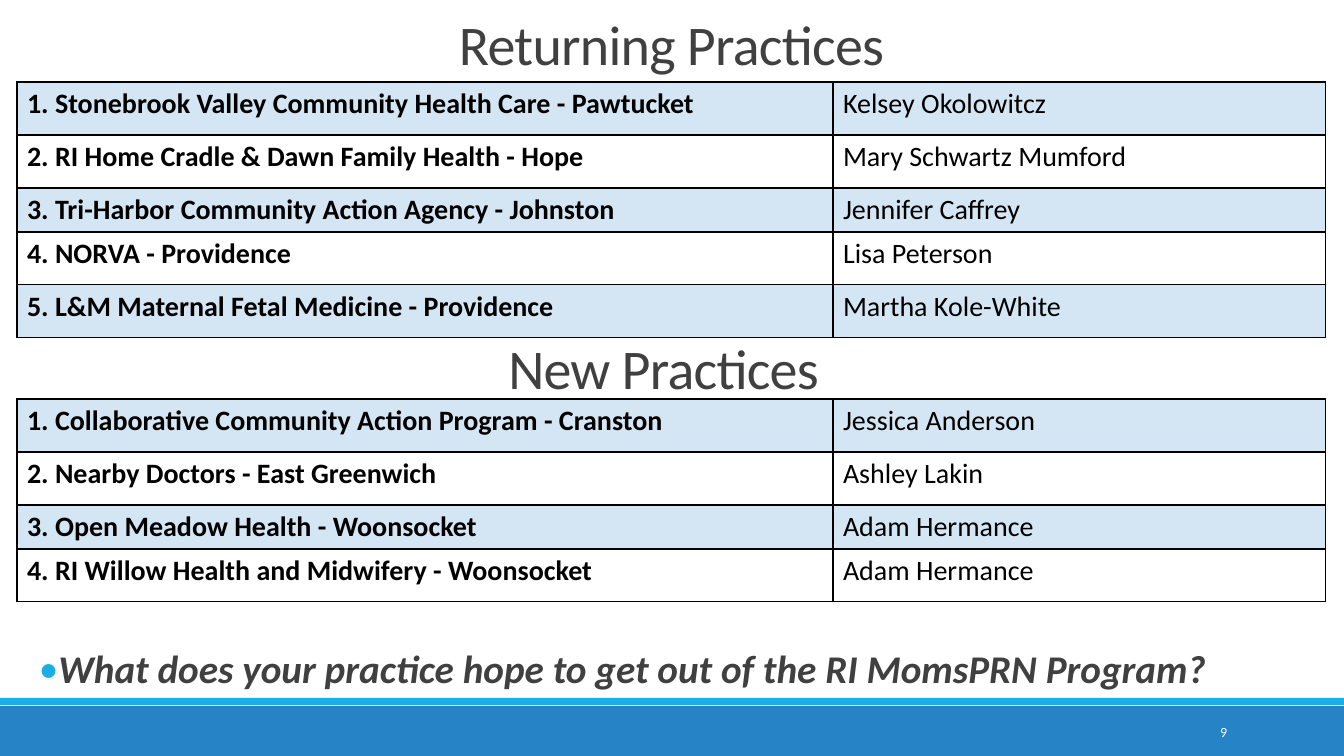
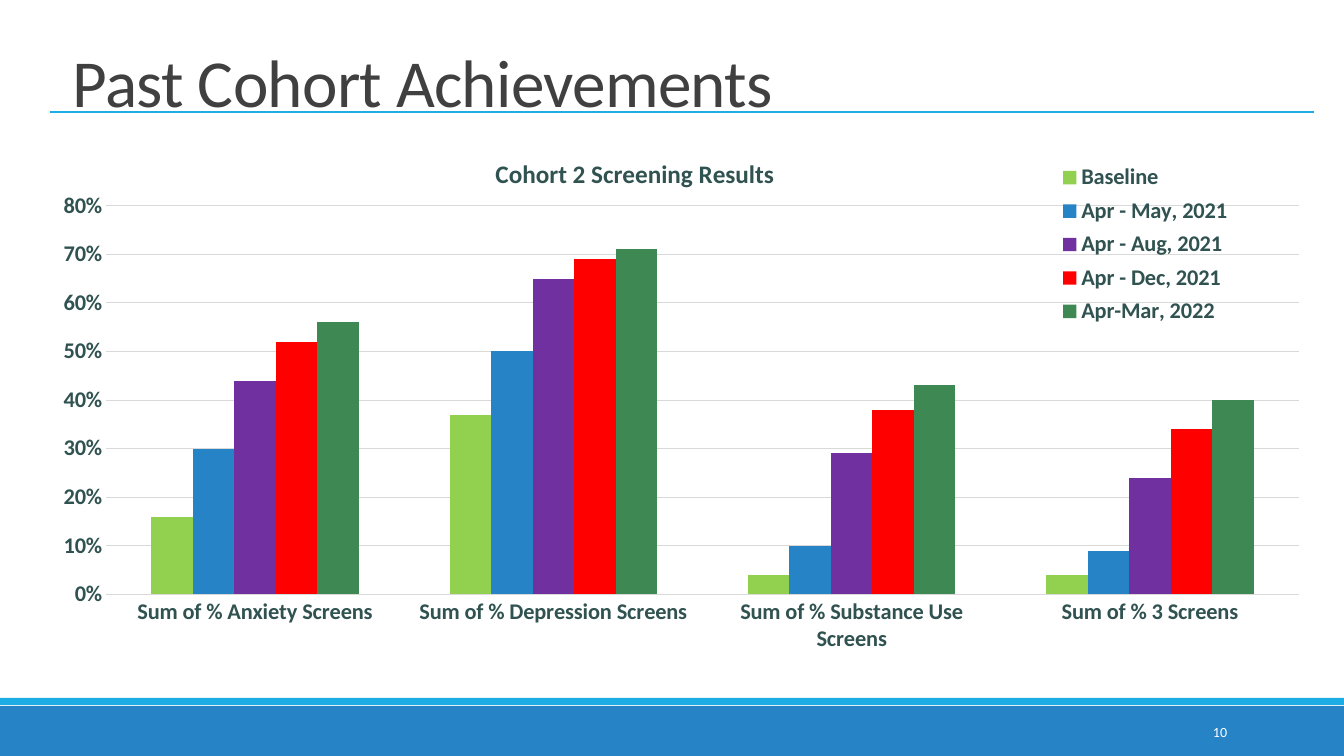
import pptx
import pptx.chart.data
import pptx.dml.color
import pptx.enum.chart
import pptx.enum.shapes
import pptx.enum.text
import pptx.oxml
import pptx.oxml.ns
import pptx.util

EMU_PER_PX = 914400 / 100.8
FONT = "Calibri"
BLUE, SKY, PALE_BLUE = "2683C6", "1CADE4", "D4E6F4"
DARK, WHITE, BLACK = "404040", "FFFFFF", "000000"
CHART_TEXT, CHART_RULE = "305250", "D9D9D9"

rgb = pptx.dml.color.RGBColor.from_string
Pt = pptx.util.Pt
qn = pptx.oxml.ns.qn
ALIGN = pptx.enum.text.PP_ALIGN
ANCHOR = pptx.enum.text.MSO_ANCHOR


def px(length):
    return pptx.util.Emu(round(length * EMU_PER_PX))


def add_text(slide, box, text, size, color, align, anchor, line_spacing=1.0, spc=0):
    frame = slide.shapes.add_textbox(*map(px, box)).text_frame
    frame.word_wrap = True
    frame.vertical_anchor = anchor
    paragraph = frame.paragraphs[0]
    paragraph.text = text
    paragraph.alignment = align
    paragraph.line_spacing = line_spacing
    run = paragraph.runs[0]
    run.font.name, run.font.size = FONT, Pt(size)
    run.font.color.rgb = rgb(color)
    if spc:
        run._r.get_or_add_rPr().set("spc", str(spc))
    return frame


prs = pptx.Presentation()
prs.slide_width, prs.slide_height = px(1344), px(756)
practices_slide, results_slide = [
    prs.slides.add_slide(prs.slide_layouts[6]) for _ in range(2)]

# Footer bands, page numbers and titles
for number, slide in enumerate((practices_slide, results_slide), 9):
    for top, height, color in ((706, 50, BLUE), (698, 7, SKY)):
        band = slide.shapes.add_shape(
            pptx.enum.shapes.MSO_SHAPE.RECTANGLE, 0, px(top), prs.slide_width, px(height))
        band.shadow.inherit = False
        band.fill.solid()
        band.fill.fore_color.rgb = rgb(color)
        band.line.fill.background()
    add_text(slide, (1092, 712, 145, 40), str(number), 10, WHITE,
             ALIGN.RIGHT, ANCHOR.MIDDLE)

for slide, box, title, size in (
        (practices_slide, (217, 0, 909, 82), "Returning Practices", 40),
        (practices_slide, (209, 324, 909, 82), "New Practices", 40),
        (results_slide, (29, 44, 788, 82), "Past Cohort Achievements", 48)):
    add_text(slide, box, title, size, DARK, ALIGN.CENTER, ANCHOR.BOTTOM, 0.85, -50)

# Practice tables
returning = [
    ("1. Stonebrook Valley Community Health Care - Pawtucket", "Kelsey Okolowitcz"),
    ("2. RI Home Cradle & Dawn Family Health - Hope", "Mary Schwartz Mumford"),
    ("3. Tri-Harbor Community Action Agency - Johnston", "Jennifer Caffrey"),
    ("4. NORVA - Providence", "Lisa Peterson"),
    ("5. L&M Maternal Fetal Medicine - Providence", "Martha Kole-White"),
]
new = [
    ("1. Collaborative Community Action Program - Cranston", "Jessica Anderson"),
    ("2. Nearby Doctors - East Greenwich", "Ashley Lakin"),
    ("3. Open Meadow Health - Woonsocket", "Adam Hermance"),
    ("4. RI Willow Health and Midwifery - Woonsocket", "Adam Hermance"),
]
row_heights = (53, 53, 44, 53, 53)
column_widths = (816, 493)

for top, practices in ((82, returning), (399, new)):
    heights = row_heights[:len(practices)]
    table = practices_slide.shapes.add_table(
        len(practices), 2, px(17), px(top), px(sum(column_widths)), px(sum(heights))).table
    table.first_row = table.horz_banding = False
    for column, width in zip(table.columns, column_widths):
        column.width = px(width)
    for r, (practice, height) in enumerate(zip(practices, heights)):
        table.rows[r].height = px(height)
        for c, text in enumerate(practice):
            cell = table.cell(r, c)
            cell.text = text
            font = cell.text_frame.paragraphs[0].runs[0].font
            font.name, font.size, font.bold = FONT, Pt(20), c == 0
            font.color.rgb = rgb(BLACK)
            for side in ("lnL", "lnR", "lnT", "lnB"):
                cell._tc.get_or_add_tcPr().append(pptx.oxml.parse_xml(
                    f'<a:{side} {pptx.oxml.ns.nsdecls("a")} w="12700"><a:solidFill>'
                    f'<a:srgbClr val="{BLACK}"/></a:solidFill></a:{side}>'))
            if r % 2 == 0:
                cell.fill.solid()
                cell.fill.fore_color.rgb = rgb(PALE_BLUE)
            else:
                cell.fill.background()

# Discussion question
question = add_text(
    practices_slide, (39, 645, 1247, 48),
    "What does your practice hope to get out of the RI MomsPRN Program?",
    28, DARK, ALIGN.LEFT, ANCHOR.TOP, 0.9)
question.margin_left = question.margin_right = 0
paragraph = question.paragraphs[0]
properties = paragraph._p.get_or_add_pPr()
properties.set("marL", str(px(10)))
properties.set("indent", str(px(-10)))
for bullet in (f'<a:buClr {{}}><a:srgbClr val="{SKY}"/></a:buClr>',
               '<a:buFont {} typeface="Calibri"/>', '<a:buChar {} char="•"/>'):
    properties.append(pptx.oxml.parse_xml(bullet.format(pptx.oxml.ns.nsdecls("a"))))
paragraph.runs[0].font.bold = paragraph.runs[0].font.italic = True

# Rule under the results title
rule = results_slide.shapes.add_connector(
    pptx.enum.shapes.MSO_CONNECTOR.STRAIGHT, px(50), px(112), px(1314), px(112))
rule.line.color.rgb = rgb(SKY)
rule.line.width = Pt(1)
rule._element.spPr.append(pptx.oxml.parse_xml(
    f'<a:effectLst {pptx.oxml.ns.nsdecls("a")}/>'))

# Screening chart
periods = [
    ("Baseline", (0.16, 0.37, 0.04, 0.04), "92D050"),
    ("Apr - May, 2021", (0.3, 0.5, 0.1, 0.09), BLUE),
    ("Apr - Aug, 2021", (0.44, 0.65, 0.29, 0.24), "7030A0"),
    ("Apr - Dec, 2021", (0.52, 0.69, 0.38, 0.34), "FF0000"),
    ("Apr-Mar, 2022", (0.56, 0.71, 0.43, 0.4), "3E8853"),
]
screening = pptx.chart.data.CategoryChartData(number_format="0%")
screening.categories = [f"Sum of % {kind}" for kind in (
    "Anxiety Screens", "Depression Screens", "Substance Use Screens", "3 Screens")]
for period, shares, _ in periods:
    screening.add_series(period, shares)
chart = results_slide.shapes.add_chart(
    pptx.enum.chart.XL_CHART_TYPE.COLUMN_CLUSTERED,
    px(29), px(128), px(1283), px(598), screening).chart
chart.font.name, chart.font.size, chart.font.bold = FONT, Pt(16), True
chart.font.color.rgb = rgb(CHART_TEXT)

columns = chart.plots[0]
columns.gap_width, columns.overlap = 219, 0
columns.vary_by_categories = False
for series, (_, _, color) in zip(columns.series, periods):
    series.format.fill.solid()
    series.format.fill.fore_color.rgb = rgb(color)

shares_axis, screens_axis = chart.value_axis, chart.category_axis
for axis in (shares_axis, screens_axis):
    axis.major_tick_mark = axis.minor_tick_mark = pptx.enum.chart.XL_TICK_MARK.NONE
shares_axis.minimum_scale, shares_axis.maximum_scale = 0, 0.8
shares_axis.major_unit = 0.1
shares_axis.tick_labels.number_format = "0%"
shares_axis.tick_labels.number_format_is_linked = False
shares_axis.format.line.fill.background()
for line in (shares_axis.major_gridlines.format.line, screens_axis.format.line):
    line.color.rgb = rgb(CHART_RULE)
    line.width = Pt(0.75)

chart.has_title = True
chart.chart_title.text_frame.text = "Cohort 2 Screening Results"
title_font = chart.chart_title.text_frame.paragraphs[0].runs[0].font
title_font.name, title_font.size, title_font.bold = FONT, Pt(18), True
title_font.color.rgb = rgb(CHART_TEXT)
chart.has_legend = True
chart.legend.include_in_layout = False

# Fixed places of title, legend and plot, as shares of the chart
plot_area = chart._chartSpace.find(".//" + qn("c:plotArea"))
for part, index, place in (
        (chart.chart_title._element, 1, {"x": 0.36, "y": 0.04}),
        (chart.legend._element, 1, {"x": 0.79, "y": 0.05, "w": 0.16, "h": 0.29}),
        (plot_area, 0, {"x": 0.06, "y": 0.13, "w": 0.93, "h": 0.65})):
    for layout in part.findall(qn("c:layout")):
        part.remove(layout)
    target = '<c:layoutTarget val="inner"/>' if part is plot_area else ""
    modes = "".join(f'<c:{key}Mode val="edge"/>' for key in "xy")
    values = "".join(f'<c:{key} val="{value}"/>' for key, value in place.items())
    part.insert(index, pptx.oxml.parse_xml(
        f'<c:layout {pptx.oxml.ns.nsdecls("c")}><c:manualLayout>'
        f'{target}{modes}{values}</c:manualLayout></c:layout>'))

prs.save("out.pptx")
